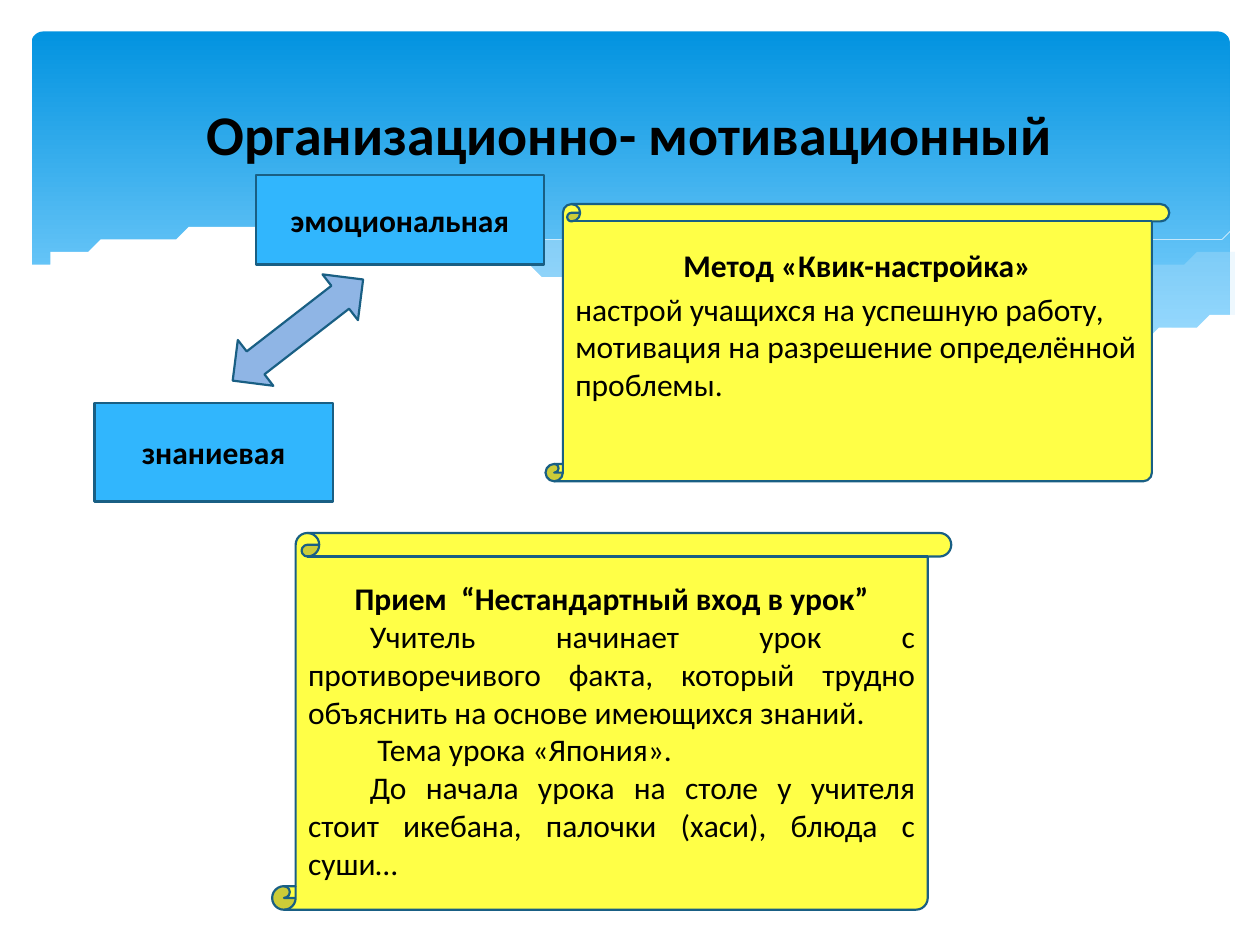
from lxml import etree
from pptx import Presentation
from pptx import util as u
from pptx.dml.color import RGBColor
from pptx.enum import shapes, text
from pptx.oxml.ns import qn

# The slide is a grid of square cells, 100 columns by 75 rows.
COLUMNS, ROWS = 100, 75
CELL = u.Inches(0.1)

BLACK = RGBColor(0x00, 0x00, 0x00)
WHITE = RGBColor(0xFF, 0xFF, 0xFF)
SKY_TOP = RGBColor(0x02, 0x93, 0xE0)
SKY_BOTTOM = RGBColor(0x83, 0xD3, 0xFE)
MIST = RGBColor(0xC6, 0xE7, 0xFC)
PAPER = RGBColor(0xFF, 0xFF, 0x47)
BOX_BLUE = RGBColor(0x31, 0xB6, 0xFD)
ARROW_BLUE = RGBColor(0x8F, 0xB5, 0xE5)
OUTLINE = RGBColor(0x19, 0x5F, 0x84)

FONT = "Calibri"
CENTER, LEFT, JUSTIFY = (text.PP_ALIGN.CENTER, text.PP_ALIGN.LEFT,
                         text.PP_ALIGN.JUSTIFY)
GAP = 3.6  # points, a fifth of the text size

# Knots of the wave curves, in cells
RIGHT_MIST_TOP = [(97.6, 20), (92.1, 21), (86.1, 22.3), (77.9, 24.2), (66.1, 26.5)]
RIGHT_MIST_BOTTOM = [(66.1, 26.5), (71.9, 27.1), (76.9, 27.6), (81.4, 27.8),
                     (86.3, 27.5), (91.3, 26.7), (94.9, 25.7), (97.6, 24.7)]
MIDDLE_MIST_TOP = [(89.3, 27.3), (80.7, 26), (70.6, 24), (59.8, 21.4), (52.8, 20),
                   (46.5, 19.1), (39.9, 18.6), (34.4, 18.6), (28.6, 19.1)]
MIDDLE_MIST_BOTTOM = [(28.6, 19.1), (36.2, 20.3), (44.9, 22.2), (53, 24), (60.1, 25.5),
                      (68, 26.8), (74.8, 27.6), (81.8, 27.8), (89.3, 27.3)]
LONG_LINE = [(30.9, 19.5), (36.3, 18.9), (43.3, 18.7), (51, 19.2), (60.8, 20.4),
             (69.5, 21.9), (79.5, 24.1), (90.7, 27.2)]
RISING_LINE = [(61.3, 25.7), (69.5, 23.5), (77.6, 21.6), (86.6, 19.9), (92.4, 19),
               (97.5, 18.5)]
GROUND_TOP = [(97.7, 24.6), (93, 26.2), (87.5, 27.3), (80.9, 27.7), (72.6, 27.2),
              (62.6, 25.8), (52.9, 23.9), (44.7, 22), (36.5, 20.2), (29.2, 19),
              (23, 18.5), (17.7, 18.4), (13.2, 18.6), (9.5, 19.1), (5.9, 19.9),
              (3.6, 20.7), (2.3, 21.3)]
GROUND_CORNERS = [(2.3, 32.9), (97.7, 32.9)]


def cells(*values):
    return [round(value * CELL) for value in values]


def smooth(knots, steps=6):
    """Points of a Catmull-Rom curve through the knots."""
    ends = [knots[0], *knots, knots[-1]]
    points = [knots[0]]
    for a, b, c, d in zip(ends, ends[1:], ends[2:], ends[3:]):
        for step in range(1, steps + 1):
            t = step / steps
            points.append(tuple(
                (2 * q + (r - p) * t + (2 * p - 5 * q + 4 * r - s) * t ** 2
                 + (3 * q - p - 3 * r + s) * t ** 3) / 2
                for p, q, r, s in zip(a, b, c, d)))
    return points


def add_wave(slide, points, color, opacity=100, closed=True):
    """A filled area, or a hairline when it is not closed."""
    builder = slide.shapes.build_freeform(*points[0], scale=CELL)
    builder.add_line_segments(points[1:], close=closed)
    wave = builder.convert_to_shape()
    wave.shadow.inherit = False
    if not closed:
        wave.fill.background()
        wave.line.color.rgb = color
        wave.line.width = u.Pt(0.25)
        return
    wave.line.fill.background()
    wave.fill.solid()
    wave.fill.fore_color.rgb = color
    if opacity < 100:
        tint = wave.fill._xPr.find(".//" + qn("a:srgbClr"))
        etree.SubElement(tint, qn("a:alpha"), val=str(opacity * 1000))


def add_sky(slide):
    sky = slide.shapes.add_shape(shapes.MSO_SHAPE.ROUNDED_RECTANGLE,
                                 *cells(2.5, 2.5, 95.1, 27))
    sky.adjustments[0] = 0.034
    sky.shadow.inherit = False
    sky.line.fill.background()
    sky.fill.gradient()
    sky.fill.gradient_angle = 270
    stops = zip(sky.fill.gradient_stops, (SKY_TOP, SKY_BOTTOM), (0, 0.9))
    for stop, color, position in stops:
        stop.color.rgb = color
        stop.position = position


def add_background(slide):
    add_sky(slide)
    add_wave(slide, smooth(RIGHT_MIST_TOP) + smooth(RIGHT_MIST_BOTTOM), MIST, 29)
    add_wave(slide, smooth(MIDDLE_MIST_TOP) + smooth(MIDDLE_MIST_BOTTOM), MIST, 40)
    for knots in (LONG_LINE, RISING_LINE):
        add_wave(slide, smooth(knots), WHITE, closed=False)
    add_wave(slide, smooth(GROUND_TOP) + GROUND_CORNERS, WHITE)


def add_outlined(slide, preset, place, color):
    shape = slide.shapes.add_shape(preset, *cells(*place))
    shape.shadow.inherit = False
    shape.fill.solid()
    shape.fill.fore_color.rgb = color
    shape.line.color.rgb = OUTLINE
    shape.line.width = u.Pt(1.25)
    return shape


def write(paragraph, words, size=18, bold=True, align=CENTER, indent=0, before=0):
    paragraph.text = words
    paragraph.alignment = align
    if indent:
        paragraph._p.get_or_add_pPr().set("indent", str(u.Inches(indent)))
    if before:
        paragraph.space_before = u.Pt(before)
    for run in paragraph.runs:
        run.font.name = FONT
        run.font.size = u.Pt(size)
        run.font.bold = bold
        run.font.color.rgb = BLACK


def add_title(slide, words):
    frame = slide.shapes.add_textbox(*cells(5, 3.7, 90, 13.7)).text_frame
    frame.word_wrap = True
    frame.vertical_anchor = text.MSO_ANCHOR.MIDDLE
    write(frame.paragraphs[0], words, size=32)


def add_box(slide, place, words):
    box = add_outlined(slide, shapes.MSO_SHAPE.RECTANGLE, place, BOX_BLUE)
    write(box.text_frame.paragraphs[0], words)


def add_scroll(slide, place, heading, body, top_inset=0.05, bottom_inset=0.05):
    """A scroll with a bold heading; body holds (words, paragraph options)."""
    scroll = add_outlined(slide, shapes.MSO_SHAPE.VERTICAL_SCROLL, place, PAPER)
    scroll.adjustments[0] = 0.0625
    frame = scroll.text_frame
    frame.word_wrap = True
    frame.margin_top = u.Inches(top_inset)
    frame.margin_bottom = u.Inches(bottom_inset)
    write(frame.paragraphs[0], heading)
    for words, options in body:
        write(frame.add_paragraph(), words, bold=False, **options)


def main():
    deck = Presentation()
    deck.slide_width, deck.slide_height = cells(COLUMNS, ROWS)
    slide = deck.slides.add_slide(deck.slide_layouts[6])

    add_background(slide)
    add_scroll(slide, (43.3, 16.2, 49.5, 22), "Метод «Квик-настройка»", [
        ("настрой учащихся на успешную работу, мотивация на разрешение "
         "определённой проблемы.", dict(align=LEFT, before=GAP)),
    ], bottom_inset=0.41)
    add_title(slide, "Организационно- мотивационный")
    story = dict(align=JUSTIFY, indent=0.49)
    add_scroll(slide, (21.6, 42.3, 53.9, 29.9), "Прием  “Нестандартный вход в урок”", [
        ("Учитель начинает урок с противоречивого факта, который трудно "
         "объяснить на основе имеющихся знаний.", story),
        ("Тема урока «Япония».", dict(align=JUSTIFY, indent=0.55)),
        ("До начала урока на столе у учителя стоит икебана, палочки (хаси), "
         "блюда с суши…", story),
    ], top_inset=0.1)
    add_box(slide, (7.5, 32, 18.9, 7.8), "знаниевая")
    add_box(slide, (20.3, 13.9, 22.9, 7.1), "эмоциональная")
    link = add_outlined(slide, shapes.MSO_SHAPE.LEFT_RIGHT_ARROW,
                        (17.1, 23.9, 13.1, 4.6), ARROW_BLUE)
    link.rotation = 322.2

    deck.save("out.pptx")


if __name__ == "__main__":
    main()
